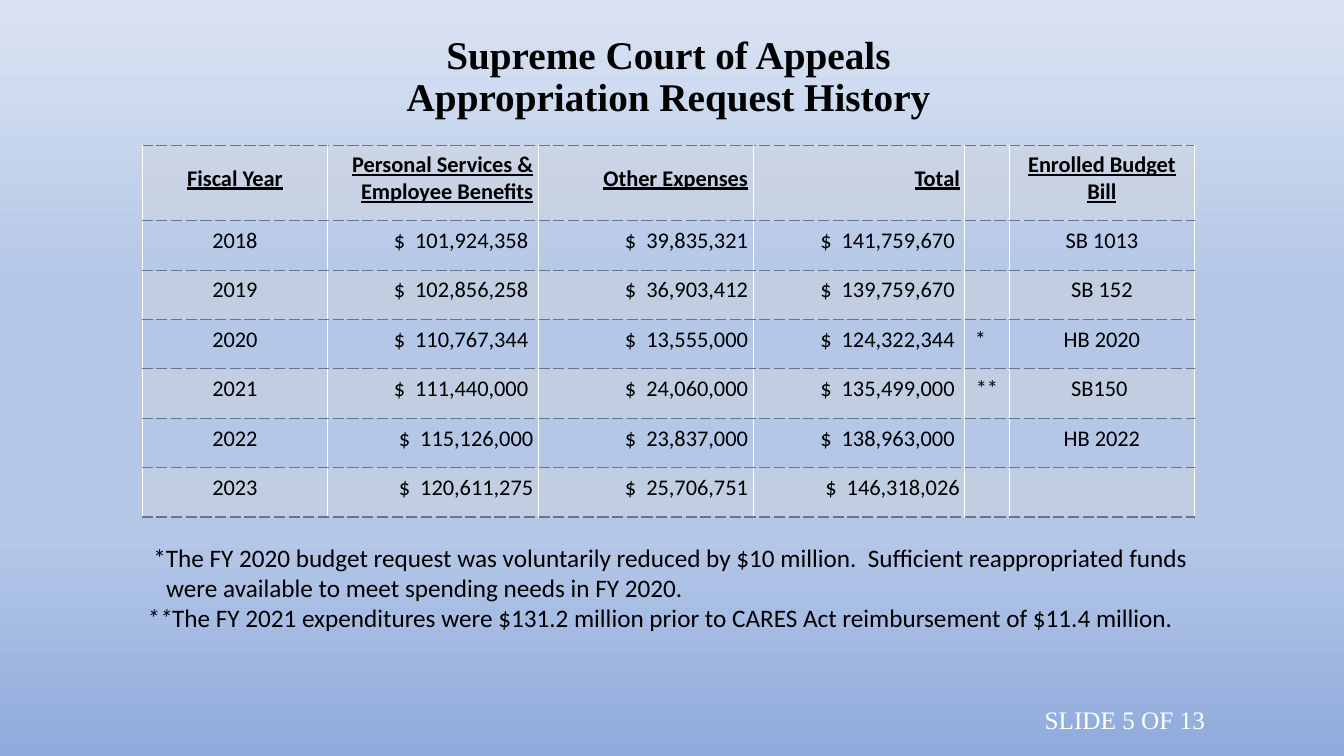
import dataclasses

import pptx
import pptx.dml.color
import pptx.enum.text
import pptx.oxml
import pptx.oxml.ns
import pptx.util

PX = 9144  # one hundredth of an inch
ALIGN = pptx.enum.text.PP_ALIGN
ANCHOR = pptx.enum.text.MSO_ANCHOR
FIT = pptx.enum.text.MSO_AUTO_SIZE
NS = pptx.oxml.ns.nsdecls("a")


@dataclasses.dataclass(frozen=True)
class Theme:
    serif: str = "Times New Roman"
    sans: str = "Calibri"
    title: int = 28
    body: int = 18
    cell: int = 16
    ink: str = "000000"
    light: str = "FFFFFF"
    dash: str = "63778F"
    band: str = "D0D6DE"
    alpha: int = 48
    sky: tuple = ((0, "8FAADC"), (29, "B4C7E7"), (62, "B4C7E7"), (100, "DAE3F3"))


THEME = Theme()

HEADS = ["Fiscal Year", "Personal Services & Employee Benefits",
         "Other Expenses", "Total", "", "Enrolled Budget Bill"]
YEARS = [
    ["2018", "$  101,924,358 ", "$  39,835,321", "$  141,759,670 ", "", "SB 1013"],
    ["2019", "$  102,856,258 ", "$  36,903,412", "$  139,759,670 ", "", "SB 152"],
    ["2020", "$  110,767,344 ", "$  13,555,000", "$  124,322,344 ", " *", "HB 2020"],
    ["2021", "$  111,440,000 ", "$  24,060,000", "$  135,499,000 ", "**", "SB150 "],
    ["2022", "$  115,126,000", "$  23,837,000", "$  138,963,000 ", "", "HB 2022"],
    ["2023", "$  120,611,275", "$  25,706,751", "$  146,318,026", "", ""],
]
WIDTHS = [184, 209, 213, 210, 44, 184]
ALIGNS = [ALIGN.CENTER, ALIGN.RIGHT, ALIGN.RIGHT, ALIGN.RIGHT, ALIGN.CENTER, ALIGN.CENTER]
HEAD_ROW, YEAR_ROW = 75, 49

# Each note is a list of (text, font, italic) parts.
NOTES = [
    [(" ", THEME.serif, False),
     ("*The FY 2020 budget request was voluntarily reduced by $10 million.  "
      "Sufficient reappropriated funds were available to meet spending needs in FY 2020.",
      THEME.sans, False)],
    [("**", THEME.sans, True),
     ("The FY 2021 expenditures were $131.2 million prior to CARES Act "
      "reimbursement of $11.4 million.", THEME.sans, False)],
]


def style(font, name, size, color, bold=False, italic=False, under=False):
    font.name = name
    font.size = pptx.util.Pt(size)
    font.color.rgb = pptx.dml.color.RGBColor.from_string(color)
    font.bold, font.italic, font.underline = bold, italic, under


def place(shape, left, top, width, height):
    shape.left, shape.top = left * PX, top * PX
    shape.width, shape.height = width * PX, height * PX


def paint_sky(slide):
    """Fill the background with the gradient, running from bottom to top."""
    fill = slide.background.fill
    fill.gradient()
    fill.gradient_angle = 90
    stops = slide.element.find(".//" + pptx.oxml.ns.qn("a:gsLst"))
    for stop in list(stops):
        stops.remove(stop)
    for place_pct, color in THEME.sky:
        stops.append(pptx.oxml.parse_xml(
            f'<a:gs {NS} pos="{place_pct * 1000}"><a:srgbClr val="{color}"/></a:gs>'))


def add_title(slide, text):
    title = slide.shapes.title
    place(title, 84, 32, 1158, 90)
    frame = title.text_frame
    frame.text = text
    frame.auto_size = FIT.NONE
    frame.vertical_anchor = ANCHOR.MIDDLE
    para = frame.paragraphs[0]
    para.alignment = ALIGN.CENTER
    para.line_spacing = 0.9
    for run in para.runs:
        style(run.font, THEME.serif, THEME.title, THEME.ink, bold=True)


def add_box(slide, left, top, width, height):
    box = slide.shapes.add_textbox(left * PX, top * PX, width * PX, height * PX)
    frame = box.text_frame
    frame.word_wrap = True
    frame.auto_size = FIT.SHAPE_TO_FIT_TEXT
    return frame


def add_notes(slide):
    frame = add_box(slide, 136, 533, 1056, 131)
    for i, parts in enumerate(NOTES):
        para = frame.add_paragraph() if i else frame.paragraphs[0]
        props = para._p.get_or_add_pPr()
        props.set("marL", str(19 * PX))
        props.set("indent", str(-19 * PX))
        for text, name, italic in parts:
            run = para.add_run()
            run.text = text
            style(run.font, name, THEME.body, THEME.ink, italic=italic)


def add_count(slide, text):
    frame = add_box(slide, 1012, 694, 193, 40)
    frame.text = text
    para = frame.paragraphs[0]
    para.alignment = ALIGN.RIGHT
    style(para.runs[0].font, THEME.serif, THEME.body, THEME.light)


def set_lines(cell):
    """Give a cell white sides and dashed top and bottom lines."""
    props = cell._tc.get_or_add_tcPr()
    for side in "LRTB":
        color, dash = (THEME.light, "solid") if side in "LR" else (THEME.dash, "sysDash")
        props.append(pptx.oxml.parse_xml(
            f'<a:ln{side} {NS} w="12700"><a:solidFill><a:srgbClr val="{color}"/>'
            f'</a:solidFill><a:prstDash val="{dash}"/></a:ln{side}>'))


def set_fill(cell, banded):
    if not banded:
        cell.fill.background()
        return
    cell.fill.solid()
    cell.fill.fore_color.rgb = pptx.dml.color.RGBColor.from_string(THEME.band)
    color = cell._tc.tcPr.find("./" + pptx.oxml.ns.qn("a:solidFill"))[0]
    color.append(pptx.oxml.parse_xml(f'<a:alpha {NS} val="{THEME.alpha * 1000}"/>'))


def set_text(cell, text, align, head):
    cell.vertical_anchor = ANCHOR.MIDDLE
    cell.margin_left = cell.margin_right = 5 * PX
    cell.margin_top, cell.margin_bottom = PX, 10 * PX
    cell.text_frame.text = text
    para = cell.text_frame.paragraphs[0]
    para.alignment = align
    style(para.font, THEME.sans, THEME.cell, THEME.ink)
    for run in para.runs:
        style(run.font, THEME.sans, THEME.cell, THEME.ink, bold=head, under=head)


def add_grid(slide):
    rows = [HEADS] + YEARS
    height = HEAD_ROW + YEAR_ROW * len(YEARS)
    table = slide.shapes.add_table(
        len(rows), len(WIDTHS), 141 * PX, 144 * PX, sum(WIDTHS) * PX, height * PX).table
    table.first_row = table.horz_banding = False
    for column, width in zip(table.columns, WIDTHS):
        column.width = width * PX
    for i, row in enumerate(rows):
        table.rows[i].height = (YEAR_ROW if i else HEAD_ROW) * PX
        for j, text in enumerate(row):
            cell = table.cell(i, j)
            align = ALIGN.LEFT if text == " *" else ALIGNS[j]
            set_text(cell, text, align, head=i == 0)
            set_lines(cell)
            set_fill(cell, banded=i % 2 == 0)


def main():
    deck = pptx.Presentation()
    deck.slide_width, deck.slide_height = 1333 * PX, 750 * PX
    slide = deck.slides.add_slide(deck.slide_layouts[5])
    paint_sky(slide)
    add_title(slide, "Supreme Court of Appeals\vAppropriation Request History")
    add_notes(slide)
    add_count(slide, "SLIDE 5 OF 13")
    add_grid(slide)
    deck.save("out.pptx")


if __name__ == "__main__":
    main()
